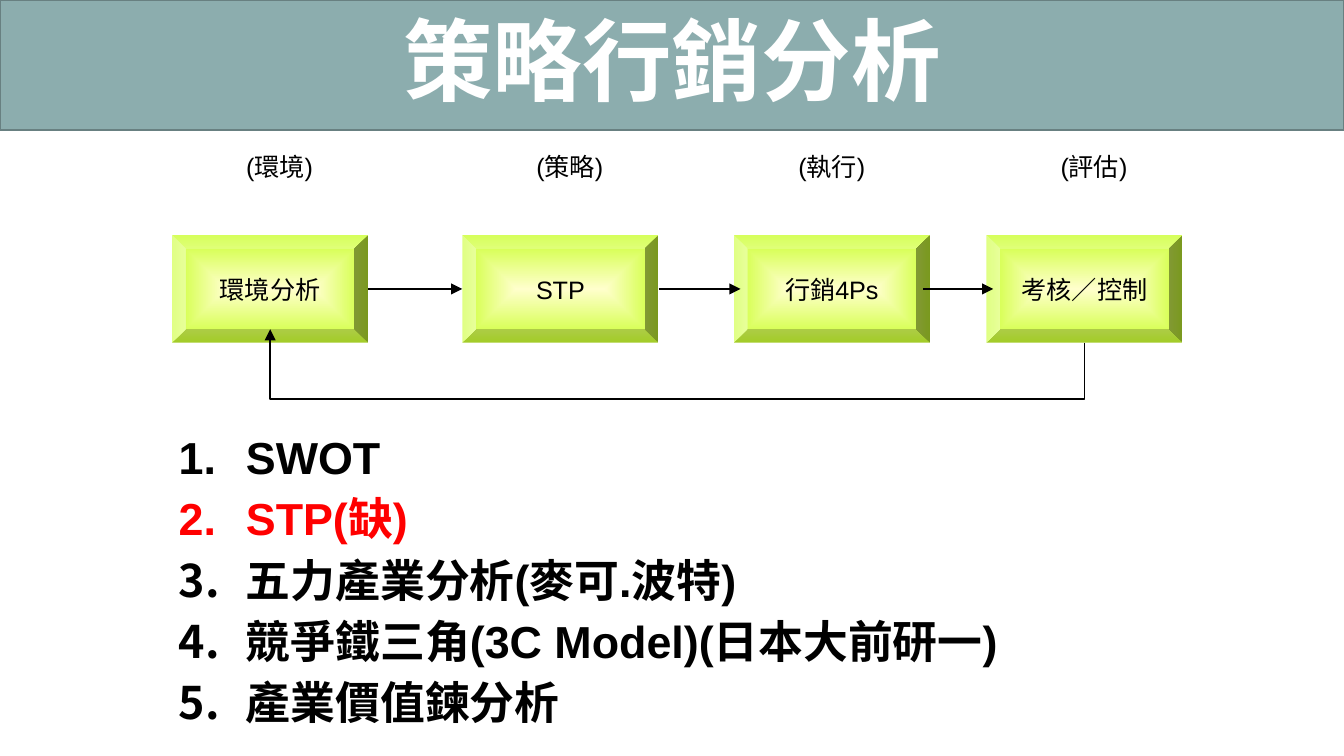
from lxml.etree import SubElement
from pptx import Presentation
from pptx.dml.color import RGBColor
from pptx.enum.shapes import MSO_CONNECTOR, MSO_SHAPE
from pptx.enum.text import MSO_ANCHOR, MSO_AUTO_SIZE, PP_ALIGN
from pptx.oxml.ns import qn
from pptx.util import Inches, Pt

COLORS = {
    "banner": "8CADAE", "banner_line": "688081", "white": "FFFFFF",
    "black": "000000", "red": "FF0000", "cream": "FFFFCC", "lime": "CCFF33",
}
STAGES = [
    ("環境分析", "(環境)", 0, 0.28),
    ("STP", "(策略)", 2.16, 0.28),
    ("行銷4Ps", "(執行)", 4.18, 0.21),
    ("考核／控制", "(評估)", 6.06, 0.28),
]
ARROWS = [(1.46, 2.16), (3.62, 4.23), (5.59, 6.11)]
TOPICS = [
    ("SWOT", "black"),
    ("STP(缺)", "red"),
    ("五力產業分析(麥可.波特)", "black"),
    ("競爭鐵三角(3C Model)(日本大前研一)", "black"),
    ("產業價值鍊分析", "black"),
]
BOX_WIDTH, BOX_HEIGHT = 1.46, 0.8


def color(name):
    """Return the named colour."""
    return RGBColor.from_string(COLORS[name])


def write(para, text, size=13.5, ink="black", bold=False, align=PP_ALIGN.CENTER,
          before=0, spacing=1.0):
    """Put formatted text in a paragraph."""
    span = para.add_run()
    span.text = text
    span.font.name = "Arial"
    span.font.size = Pt(size)
    span.font.bold = bold
    span.font.color.rgb = color(ink)
    para.alignment = align
    para.space_before = Pt(before)
    para.line_spacing = spacing


def place(shape, left, top, width, height):
    """Move and size a shape, in inches."""
    shape.left, shape.top = Inches(left), Inches(top)
    shape.width, shape.height = Inches(width), Inches(height)


def prepare_frame(shape, anchor):
    """Give a placeholder its margins and anchor, and return its text frame."""
    frame = shape.text_frame
    frame.margin_left = frame.margin_right = Inches(0.05)
    frame.margin_top = frame.margin_bottom = Inches(0.05)
    frame.vertical_anchor = anchor
    frame.auto_size = MSO_AUTO_SIZE.NONE
    frame.word_wrap = True
    return frame


def build_title(page, left, top, width, height):
    """Fill the title banner."""
    title = page.shapes.title
    place(title, left, top, width, height)
    title.fill.solid()
    title.fill.fore_color.rgb = color("banner")
    title.line.color.rgb = color("banner_line")
    title.line.width = Pt(1)
    frame = prepare_frame(title, MSO_ANCHOR.MIDDLE)
    write(frame.paragraphs[0], "策略行銷分析", size=48, ink="white", bold=True, spacing=0.9)


def build_topics(page, left, top, width, height):
    """Fill the numbered list of topics."""
    body = page.placeholders[1]
    place(body, left, top, width, height)
    frame = prepare_frame(body, MSO_ANCHOR.TOP)
    for index, (text, ink) in enumerate(TOPICS):
        para = frame.add_paragraph() if index else frame.paragraphs[0]
        write(para, text, size=24, ink=ink, bold=True, align=PP_ALIGN.LEFT,
              before=7, spacing=0.9)
        props = para._p.get_or_add_pPr()
        props.set("marL", str(Inches(0.5)))
        props.set("indent", str(Inches(-0.5)))
        SubElement(props, qn("a:buFont"), typeface="+mj-lt")
        SubElement(props, qn("a:buAutoNum"), type="arabicPeriod")


def add_stage(page, text, left, top):
    """Draw one bevelled stage with a glow from its centre."""
    box = page.shapes.add_shape(MSO_SHAPE.BEVEL, Inches(left), Inches(top),
                                Inches(BOX_WIDTH), Inches(BOX_HEIGHT))
    box.shadow.inherit = False
    box.fill.gradient()
    for stop, name in zip(box.fill.gradient_stops, ("cream", "lime")):
        stop.color.rgb = color(name)
    gradient = box._element.spPr.find(qn("a:gradFill"))
    gradient.remove(gradient.find(qn("a:lin")))
    glow = SubElement(gradient, qn("a:path"), path="rect")
    SubElement(glow, qn("a:fillToRect"), l="50000", t="50000", r="50000", b="50000")
    box.line.fill.background()
    frame = box.text_frame
    frame.word_wrap = False
    frame.vertical_anchor = MSO_ANCHOR.MIDDLE
    write(frame.paragraphs[0], text)


def add_label(page, text, left, top):
    """Write the phase name above a stage."""
    label = page.shapes.add_textbox(Inches(left), Inches(top), Inches(1.04), Inches(0.91))
    label.text_frame.word_wrap = True
    write(label.text_frame.paragraphs[0], text, before=7)


def add_arrow(page, kind, *ends):
    """Draw a thin black connector with a head at its end."""
    arrow = page.shapes.add_connector(kind, *(Inches(end) for end in ends))
    arrow.line.color.rgb = color("black")
    arrow.line.width = Pt(0.75)
    SubElement(arrow.line._get_or_add_ln(), qn("a:tailEnd"), type="triangle")
    SubElement(arrow._element.spPr, qn("a:effectLst"))
    return arrow


def add_return_arrow(page, start_x, start_y, end_x, end_y, drop):
    """Draw the elbow that runs below the stages, back to the first one."""
    middle_x, middle_y = (start_x + end_x) / 2, (start_y + end_y) / 2
    rise, run = start_y - end_y, start_x - end_x
    arrow = add_arrow(page, MSO_CONNECTOR.ELBOW,
                      middle_x - rise / 2, middle_y + run / 2,
                      middle_x + rise / 2, middle_y - run / 2)
    geometry = arrow._element.spPr
    geometry.find(qn("a:xfrm")).set("rot", str(270 * 60000))
    guides = geometry.find(qn("a:prstGeom")).find(qn("a:avLst"))
    SubElement(guides, qn("a:gd"), name="adj1", fmla=f"val {round(-drop / rise * 100000)}")


def build_flow(page, left, top):
    """Draw the stages, their labels and the arrows between them."""
    box_top = top + 0.67
    middle = box_top + BOX_HEIGHT / 2
    bottom = box_top + BOX_HEIGHT
    for text, label, offset, label_offset in STAGES:
        add_stage(page, text, left + offset, box_top)
        add_label(page, label, left + offset + label_offset, top)
    for start, end in ARROWS:
        add_arrow(page, MSO_CONNECTOR.STRAIGHT, left + start, middle, left + end, middle)
    first, last = (left + STAGES[index][2] + BOX_WIDTH / 2 for index in (0, -1))
    add_return_arrow(page, last, bottom, first, bottom - 0.1, 0.42)


def main():
    """Build and save the deck."""
    deck = Presentation()
    deck.slide_width = Inches(10)
    deck.slide_height = deck.slide_width * 9 // 16
    page = deck.slides.add_slide(deck.slide_layouts[1])
    build_title(page, 0, 0, 10, 0.97)
    build_topics(page, 1.28, 3.19, 8.08, 2.4)
    build_flow(page, 1.28, 1.08)
    deck.save("out.pptx")


if __name__ == "__main__":
    main()
